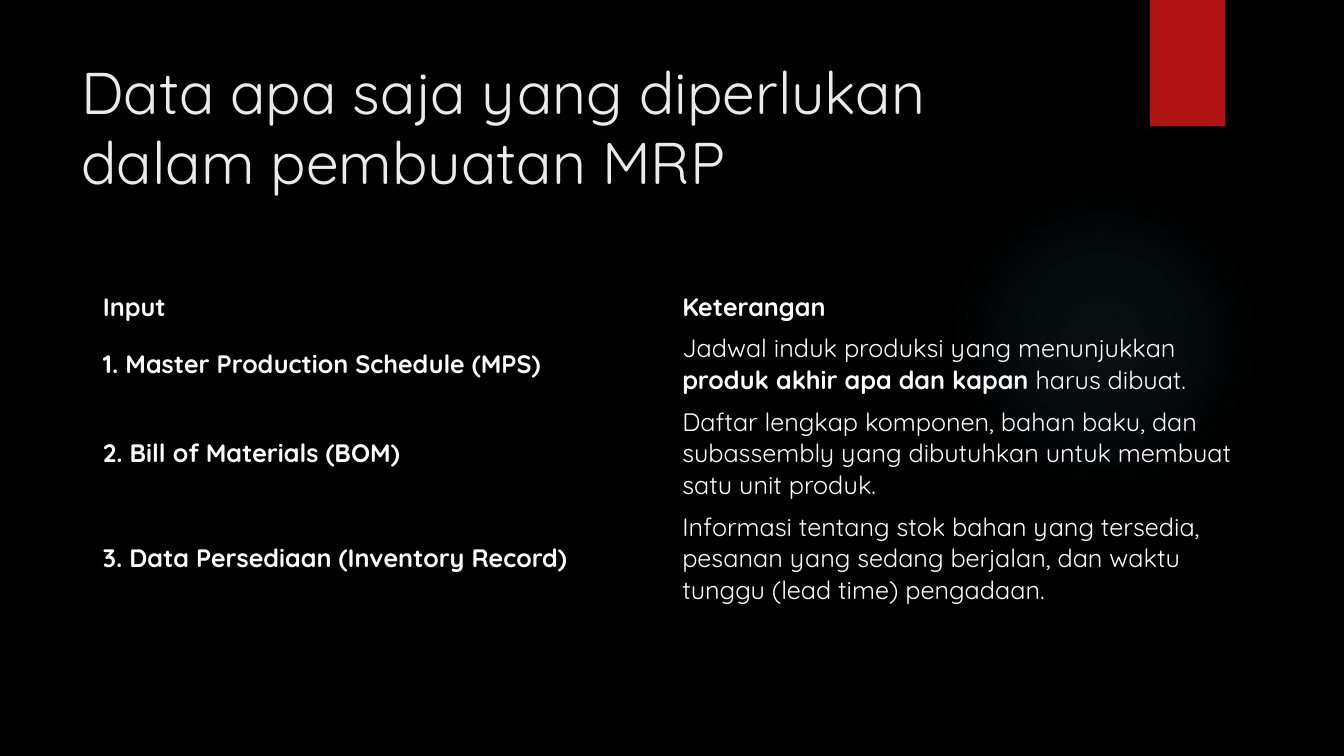
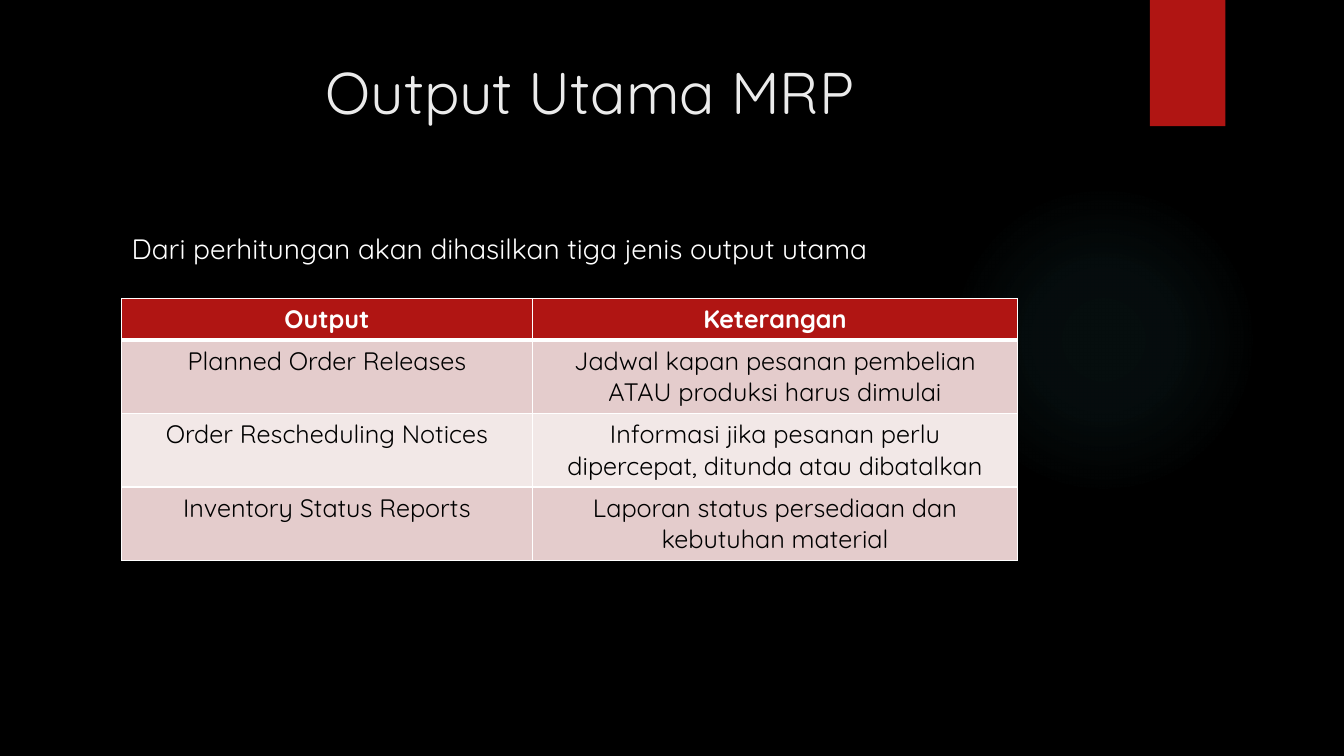
from dataclasses import dataclass
from typing import Optional

from lxml.etree import SubElement
from pptx import Presentation
from pptx.dml.color import RGBColor
from pptx.enum.shapes import MSO_SHAPE as Preset
from pptx.enum.text import MSO_ANCHOR as Anchor, MSO_AUTO_SIZE as AutoSize, PP_ALIGN as Align
from pptx.oxml.ns import qn
from pptx.util import Cm, Pt

FONT = "Quicksand"
COLORS = {
    "background": "000000",
    "glow": "50B9C1",
    "accent": "B01513",
    "title": "EBEBEB",
    "light": "FFFFFF",
    "dark": "000000",
    "band_odd": "E4CCCC",
    "band_even": "F2E8E7",
}
GLOW_STOPS = ((0, 7), (36, 6), (69, 0))
NO_STYLE = "{2D5ABB26-0587-4C30-8999-92F81FD0307C}"


@dataclass(frozen=True)
class Run:
    text: str
    bold: bool = False


@dataclass(frozen=True)
class Row:
    label: str
    details: tuple[Run, ...]
    height: float
    bold_label: bool = False


@dataclass(frozen=True)
class TableStyle:
    header_fill: Optional[str]
    band_fills: tuple[Optional[str], ...]
    text_color: str
    border: Optional[str]
    align: Align
    anchor: Anchor


PLAIN = TableStyle(None, (None,), "light", None, Align.LEFT, Anchor.MIDDLE)
BANDED = TableStyle("accent", ("band_odd", "band_even"), "dark", "light", Align.CENTER, Anchor.TOP)

INPUT_ROWS = (
    Row("Input", (Run("Keterangan", True),), 1.05, True),
    Row("1. Master Production Schedule (MPS)", (
        Run("Jadwal induk produksi yang menunjukkan "),
        Run("produk akhir apa dan kapan", True),
        Run(" harus dibuat."),
    ), 1.85, True),
    Row("2. Bill of Materials (BOM)", (
        Run("Daftar lengkap komponen, bahan baku, dan subassembly yang dibutuhkan "
            "untuk membuat satu unit produk."),
    ), 2.64, True),
    Row("3. Data Persediaan (Inventory Record)", (
        Run("Informasi tentang stok bahan yang tersedia, pesanan yang sedang berjalan, "
            "dan waktu tunggu (lead time) pengadaan."),
    ), 2.64, True),
)
OUTPUT_ROWS = (
    Row("Output", (Run("Keterangan", True),), 1.05, True),
    Row("Planned Order Releases",
        (Run("Jadwal kapan pesanan pembelian ATAU produksi harus dimulai"),), 1.85),
    Row("Order Rescheduling Notices",
        (Run("Informasi jika pesanan perlu dipercepat, ditunda atau dibatalkan"),), 1.85),
    Row("Inventory Status Reports",
        (Run("Laporan status persediaan dan kebutuhan material"),), 1.85),
)


def rgb(name: str) -> RGBColor:
    return RGBColor.from_string(COLORS[name])


def write_text(frame, runs: tuple[Run, ...], *, size: float = 18, color: str = "light",
               align: Align = Align.LEFT) -> None:
    frame.word_wrap = True
    paragraph = frame.paragraphs[0]
    paragraph.alignment = align
    for item in runs:
        run = paragraph.add_run()
        run.text = item.text
        run.font.name = FONT
        run.font.size = Pt(size)
        run.font.bold = item.bold
        run.font.color.rgb = rgb(color)


def add_solid_color(parent, name: str):
    return SubElement(parent, qn("a:srgbClr"), val=COLORS[name])


def add_plain_shape(slide, preset: Preset, left: float, top: float, width: float, height: float):
    shape = slide.shapes.add_shape(preset, Cm(left), Cm(top), Cm(width), Cm(height))
    shape.shadow.inherit = False
    shape.line.fill.background()
    return shape


def add_decoration(slide) -> None:
    glow = add_plain_shape(slide, Preset.OVAL, 23.9, 4.65, 7.82, 7.82)
    glow.fill.gradient()
    gradient = glow.element.spPr.find(qn("a:gradFill"))
    for child in list(gradient):
        gradient.remove(child)
    stops = SubElement(gradient, qn("a:gsLst"))
    for position, opacity in GLOW_STOPS:
        stop = SubElement(stops, qn("a:gs"), pos=str(position * 1000))
        SubElement(add_solid_color(stop, "glow"), qn("a:alpha"), val=str(opacity * 1000))
    circle = SubElement(gradient, qn("a:path"), {"path": "circle"})
    SubElement(circle, qn("a:fillToRect"), {side: "50000" for side in "ltrb"})

    ribbon = add_plain_shape(slide, Preset.RECTANGLE, 28.98, 0, 1.9, 3.18)
    ribbon.fill.solid()
    ribbon.fill.fore_color.rgb = rgb("accent")


def add_slide(presentation, title: str, align: Align = Align.LEFT):
    slide = presentation.slides.add_slide(presentation.slide_layouts[5])
    add_decoration(slide)
    shape = slide.shapes.title
    shape.left, shape.top, shape.width, shape.height = Cm(1.8), Cm(1.27), Cm(26.14), Cm(3.89)
    shape.text_frame.auto_size = AutoSize.NONE
    shape.text_frame.vertical_anchor = Anchor.TOP
    write_text(shape.text_frame, (Run(title),), size=42, color="title", align=align)
    return slide


def set_border(cell, side: str, color: Optional[str], width: float) -> None:
    line = SubElement(cell._tc.get_or_add_tcPr(), qn(f"a:ln{side}"), w=str(Pt(width)))
    if color is None:
        SubElement(line, qn("a:noFill"))
    else:
        add_solid_color(SubElement(line, qn("a:solidFill")), color)


def set_fill(cell, color: Optional[str]) -> None:
    if color is None:
        cell.fill.background()
    else:
        cell.fill.solid()
        cell.fill.fore_color.rgb = rgb(color)


def add_data_table(slide, rows: tuple[Row, ...], style: TableStyle, left: float, top: float,
                   widths: tuple[float, float]) -> None:
    height = sum(row.height for row in rows)
    table = slide.shapes.add_table(
        len(rows), len(widths), Cm(left), Cm(top), Cm(sum(widths)), Cm(height)).table
    table.first_row = table.horz_banding = False
    table._tbl.tblPr.find(qn("a:tableStyleId")).text = NO_STYLE
    for column, width in zip(table.columns, widths):
        column.width = Cm(width)
    for index, row in enumerate(rows):
        table.rows[index].height = Cm(row.height)
        is_header = index == 0
        fill = style.header_fill if is_header else style.band_fills[(index - 1) % len(style.band_fills)]
        border_widths = {"L": 1, "R": 1, "T": 3 if index == 1 else 1, "B": 3 if is_header else 1}
        for cell, runs in zip(table.rows[index].cells, ((Run(row.label, row.bold_label),), row.details)):
            for side, width in border_widths.items():
                set_border(cell, side, style.border, width)
            set_fill(cell, fill)
            cell.vertical_anchor = style.anchor
            write_text(cell.text_frame, runs, align=style.align,
                       color="light" if is_header else style.text_color)


def build_input_slide(presentation) -> None:
    slide = add_slide(presentation, "Data apa saja yang diperlukan dalam pembuatan MRP")
    add_data_table(slide, INPUT_ROWS, PLAIN, 2.34, 7.2, (14.6, 14.6))


def build_output_slide(presentation) -> None:
    slide = add_slide(presentation, "Output Utama MRP", Align.CENTER)
    introduction = slide.shapes.add_textbox(Cm(3.07), Cm(5.72), Cm(24.84), Cm(11.66))
    write_text(introduction.text_frame,
               (Run("Dari perhitungan akan dihasilkan tiga jenis output utama"),), size=20)
    add_data_table(slide, OUTPUT_ROWS, BANDED, 3.07, 7.52, (10.34, 12.24))


def main() -> None:
    presentation = Presentation()
    presentation.slide_width, presentation.slide_height = Cm(33.87), Cm(19.05)
    background = presentation.slide_master.background.fill
    background.solid()
    background.fore_color.rgb = rgb("background")
    build_input_slide(presentation)
    build_output_slide(presentation)
    presentation.save("out.pptx")


if __name__ == "__main__":
    main()
